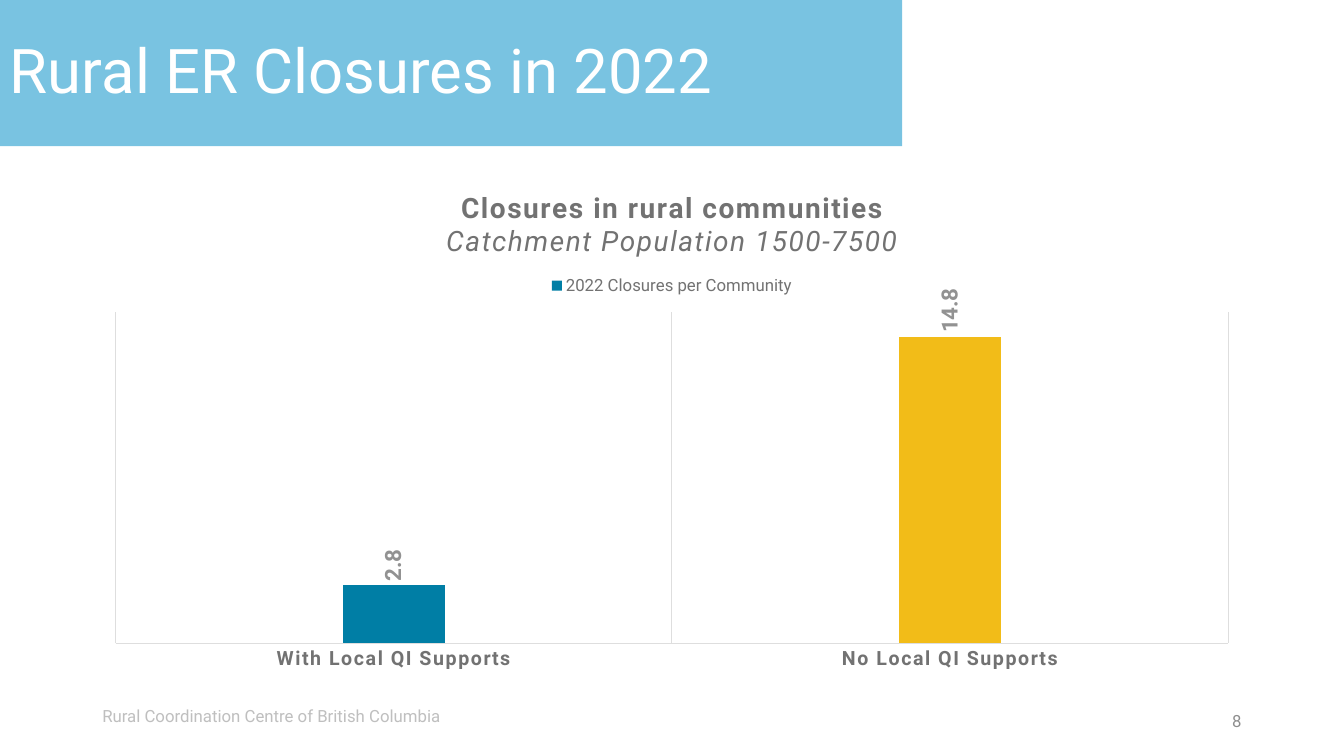
from lxml import etree
from pptx import Presentation
from pptx.chart.data import CategoryChartData
from pptx.dml.color import RGBColor
from pptx.enum.chart import XL_CHART_TYPE, XL_LABEL_POSITION, XL_LEGEND_POSITION, XL_TICK_MARK
from pptx.enum.shapes import MSO_SHAPE
from pptx.enum.text import MSO_ANCHOR, PP_ALIGN
from pptx.oxml.ns import qn
from pptx.util import Pt

TITLE = "Rural ER Closures in 2022"
FOOTER = "Rural Coordination Centre of British Columbia"
PAGE = "8"
CHART_TITLE = [("Closures in rural communities", "chart_title"),
               ("Catchment Population 1500-7500", "chart_subtitle")]
SERIES = "2022 Closures per Community"
CLOSURES = {"With Local QI Supports": 2.8, "No Local QI Supports": 14.8}

THEME = {
    "font": "Roboto",
    "banner": "79C3E1", "grid": "DEDEDE", "bars": ["007EA5", "F2BC18"],
    "text": {
        "title": dict(size=44, color="FFFFFF"),
        "footer": dict(size=12, color="BFBFBF"),
        "page": dict(size=12, color="8E8E8E"),
        "chart": dict(size=10, color="262626"),
        "chart_title": dict(size=20, color="727272", bold=True, italic=False),
        "chart_subtitle": dict(size=20, color="727272", bold=False, italic=True),
        "category": dict(size=14, color="727272", bold=True),
        "legend": dict(size=12, color="727272"),
        "value": dict(size=16, color="929292", bold=True),
    },
}
SLIDE = (960, 540)
BANNER = (0, 0, 644.4, 104.4)
FOOTER_BOX = (66, 496.8, 324, 28.8)
PAGE_BOX = (678, 500.4, 216, 28.8)
CHART_BOX = (66, 122.4, 828, 364.3)
PLOT = {"x": 0.02, "y": 0.276, "w": 0.96, "h": 0.649}
LETTER_SPACING = "100"


def rgb(value):
    return RGBColor.from_string(value)


def style(font, role):
    font.name = THEME["font"]
    for name, value in THEME["text"][role].items():
        if name == "color":
            font.color.rgb = rgb(value)
        else:
            setattr(font, name, Pt(value) if name == "size" else value)


def write(sp, text, role, align=PP_ALIGN.LEFT):
    tf = sp.text_frame
    tf.word_wrap = True
    tf.vertical_anchor = MSO_ANCHOR.MIDDLE
    p = tf.paragraphs[0]
    p.alignment = align
    r = p.add_run()
    r.text = text
    style(r.font, role)
    return p


def add_banner(s):
    sp = s.shapes.add_shape(MSO_SHAPE.RECTANGLE, *map(Pt, BANNER))
    sp.shadow.inherit = False
    sp.fill.solid()
    sp.fill.fore_color.rgb = rgb(THEME["banner"])
    sp.line.fill.background()
    write(sp, TITLE, "title").line_spacing = 0.9


def fix_plot_area(chart):
    """Pin the inner plot rectangle as fractions of the chart."""
    area = chart.plots[0]._element.getparent()
    for old in area.findall(qn("c:layout")):
        area.remove(old)
    layout = etree.Element(qn("c:layout"))
    area.insert(0, layout)
    manual = etree.SubElement(layout, qn("c:manualLayout"))
    values = {"layoutTarget": "inner", "xMode": "edge", "yMode": "edge", **PLOT}
    for tag, value in values.items():
        etree.SubElement(manual, qn("c:" + tag)).set("val", str(value))


def add_closures_chart(s):
    data = CategoryChartData(number_format="0.0")
    data.categories = list(CLOSURES)
    data.add_series(SERIES, list(CLOSURES.values()))
    chart = s.shapes.add_chart(XL_CHART_TYPE.COLUMN_CLUSTERED,
                               *map(Pt, CHART_BOX), data).chart
    style(chart.font, "chart")

    tf = chart.chart_title.text_frame
    for i, (text, role) in enumerate(CHART_TITLE):
        p = tf.add_paragraph() if i else tf.paragraphs[0]
        r = p.add_run()
        r.text = text
        style(r.font, role)
        r.font._element.set("spc", LETTER_SPACING)
    chart.chart_title.include_in_layout = False

    chart.has_legend = True
    chart.legend.position = XL_LEGEND_POSITION.TOP
    chart.legend.include_in_layout = False
    style(chart.legend.font, "legend")

    axis = chart.category_axis
    axis.major_tick_mark = axis.minor_tick_mark = XL_TICK_MARK.NONE
    axis.has_major_gridlines = True
    for line in (axis.format.line, axis.major_gridlines.format.line):
        line.color.rgb = rgb(THEME["grid"])
        line.width = Pt(0.75)
    style(axis.tick_labels.font, "category")
    axis.tick_labels.font._element.set("spc", LETTER_SPACING)

    scale = chart.value_axis
    scale.minimum_scale, scale.maximum_scale = 0, 16
    scale.has_major_gridlines = False
    scale.visible = False

    plot = chart.plots[0]
    plot.vary_by_categories = False
    plot.gap_width, plot.overlap = 444, -90
    bars = plot.series[0]
    bars.format.fill.solid()
    bars.format.fill.fore_color.rgb = rgb(THEME["bars"][0])
    highlight = bars.points[1].format.fill
    highlight.solid()
    highlight.fore_color.rgb = rgb(THEME["bars"][1])

    labels = bars.data_labels
    labels.show_value = True
    labels.position = XL_LABEL_POSITION.OUTSIDE_END
    style(labels.font, "value")
    body = labels._element.find(qn("c:txPr")).find(qn("a:bodyPr"))
    body.set("rot", "-5400000")
    body.set("vert", "horz")
    fix_plot_area(chart)


def main():
    prs = Presentation()
    prs.slide_width, prs.slide_height = map(Pt, SLIDE)
    s = prs.slides.add_slide(prs.slide_layouts[6])
    add_banner(s)
    write(s.shapes.add_textbox(*map(Pt, FOOTER_BOX)), FOOTER, "footer")
    write(s.shapes.add_textbox(*map(Pt, PAGE_BOX)), PAGE, "page", PP_ALIGN.RIGHT)
    add_closures_chart(s)
    prs.save("out.pptx")


if __name__ == "__main__":
    main()
